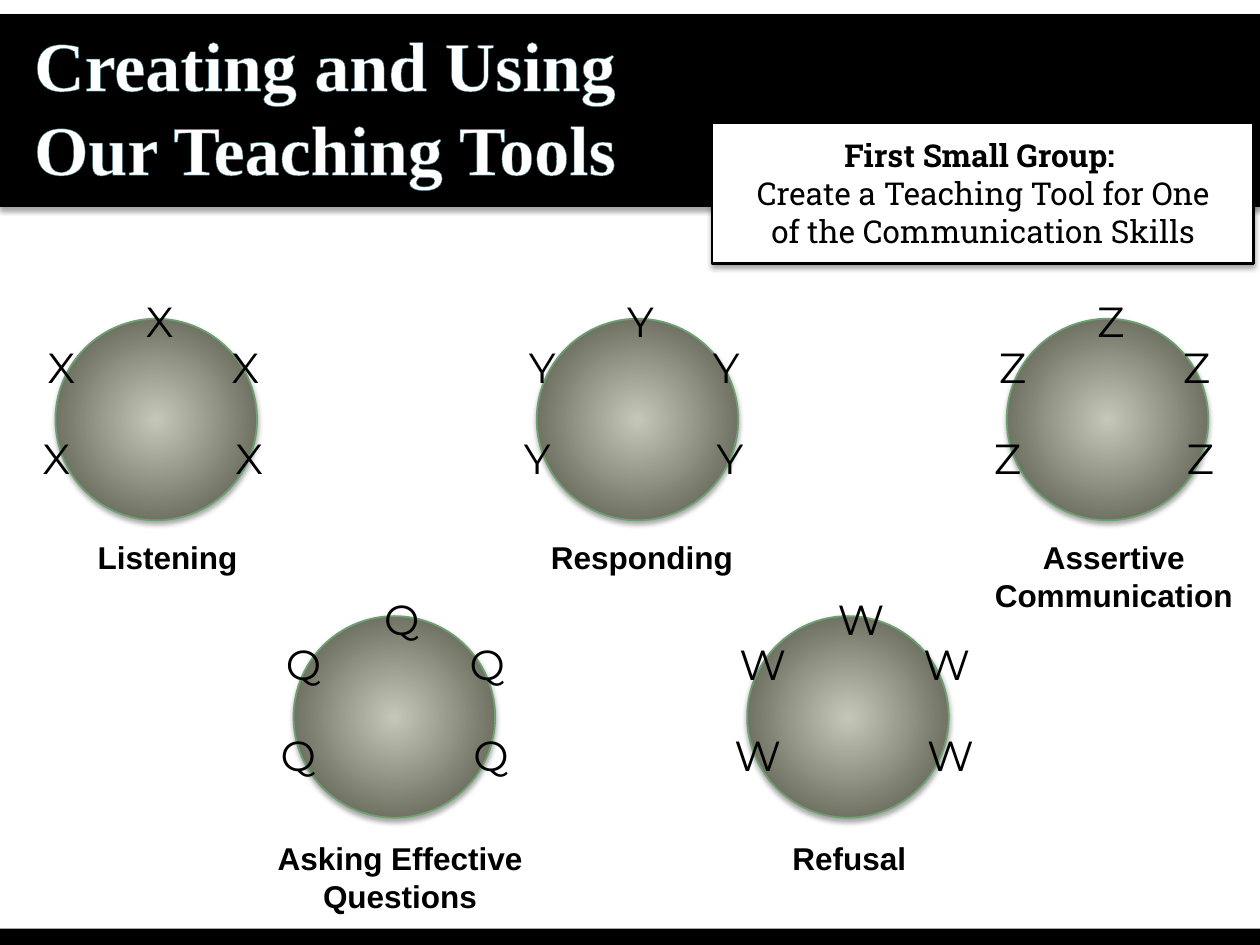
from lxml.etree import SubElement
from pptx import Presentation
from pptx.dml.color import RGBColor
from pptx.enum.shapes import MSO_SHAPE
from pptx.enum.text import MSO_ANCHOR, MSO_AUTO_SIZE, PP_ALIGN
from pptx.oxml import parse_xml
from pptx.oxml.ns import nsdecls, qn
from pptx.util import Inches, Pt

# Content
TITLE = ["Creating and Using ", "Our Teaching Tools"]
TASK = [("First Small Group: ", True),
        ("Create a Teaching Tool for One of the Communication Skills", False)]
# Skill, member letter, row, circle left, label offset from circle, label width and height
GROUPS = [
    ("Listening", "X", 0, 0.44, 0.13, 1.52, 0.4),
    ("Responding", "Y", 0, 4.26, -0.06, 1.79, 0.4),
    ("Asking Effective Questions", "Q", 1, 2.33, -0.43, 2.55, 0.71),
    ("Assertive Communication", "Z", 0, 7.99, -0.32, 2.34, 0.71),
    ("Refusal", "W", 1, 5.93, 0.05, 1.52, 0.4),
]

# Layout in inches
WIDTH, HEIGHT = 10, 7.5
BAND_WIDTH = 10.08
FOOTER_HEIGHT = 0.13
CIRCLE = 1.6
ROW_TOPS = [2.53, 4.89]
LABEL_DROPS = [1.69, 1.72]
SEATS = [(0.62, -0.23), (1.3, 0.13), (1.33, 0.85), (-0.16, 0.13), (-0.2, 0.85)]
SEAT_SIZE = (0.36, 0.5)
LINE_FACTOR = 1.2

COLORS = {"black": "000000", "white": "FFFFFF", "title_edge": "3C7483",
          "center": "C4C6B8", "rim": "4D5040", "circle_edge": "6EA172"}


def color(name):
    return RGBColor.from_string(COLORS[name])


def add_shadow(shape):
    shape._element.spPr.append(parse_xml(
        f'<a:effectLst {nsdecls("a")}><a:outerShdw blurRad="{Pt(3.1)}" dist="{Pt(1.8)}" '
        f'dir="5400000" rotWithShape="0"><a:srgbClr val="{COLORS["black"]}">'
        '<a:alpha val="35000"/></a:srgbClr></a:outerShdw></a:effectLst>'))


def add_panel(parent, kind, box, fill=None, edge=None, width=1, shadow=False):
    panel = parent.add_shape(kind, *map(Inches, box))
    if fill:
        panel.fill.solid()
        panel.fill.fore_color.rgb = color(fill)
    if edge:
        panel.line.color.rgb = color(edge)
        panel.line.width = Pt(width)
    else:
        panel.line.fill.background()
    if shadow:
        add_shadow(panel)
    else:
        panel.shadow.inherit = False
    return panel


def add_run(paragraph, text, font, size, ink="black", bold=False, outline=None):
    run = paragraph.add_run()
    run.text = text
    run.font.name, run.font.size, run.font.bold = font, Pt(size), bold
    run.font.color.rgb = color(ink)
    if outline:
        name, width = outline
        run.font._element.insert(0, parse_xml(
            f'<a:ln {nsdecls("a")} w="{Pt(width)}"><a:solidFill>'
            f'<a:srgbClr val="{COLORS[name]}"/></a:solidFill></a:ln>'))


def start_text(shape, align, size=None, grow=True):
    frame = shape.text_frame
    frame.word_wrap = True
    frame.auto_size = MSO_AUTO_SIZE.SHAPE_TO_FIT_TEXT if grow else MSO_AUTO_SIZE.NONE
    frame.vertical_anchor = MSO_ANCHOR.TOP
    paragraph = frame.paragraphs[0]
    paragraph.alignment = align
    if size:
        paragraph.line_spacing = Pt(size * LINE_FACTOR)
    return paragraph


def add_circle(parent, left, top):
    circle = add_panel(parent, MSO_SHAPE.OVAL, (left, top, CIRCLE, CIRCLE),
                       edge="circle_edge", shadow=True)
    circle.fill.gradient()
    for stop, name, position in zip(circle.fill.gradient_stops, ("center", "rim"), (0.01, 1)):
        stop.color.rgb = color(name)
        stop.position = position
    gradient = circle._element.spPr.find(qn("a:gradFill"))
    gradient.remove(gradient.find(qn("a:lin")))
    radial = SubElement(gradient, qn("a:path"), {"path": "circle"})
    SubElement(radial, qn("a:fillToRect"), dict.fromkeys("ltrb", "50000"))


def add_group(slide, skill, letter, row, left, label_shift, label_width, label_height):
    members = slide.shapes.add_group_shape().shapes
    top = ROW_TOPS[row]
    add_circle(members, left, top)
    for dx, dy in SEATS:
        seat = members.add_textbox(*map(Inches, (left + dx, top + dy, *SEAT_SIZE)))
        add_run(start_text(seat, PP_ALIGN.LEFT), letter, "Montserrat", 24,
                outline=("white", 1))
    label = add_panel(members, MSO_SHAPE.RECTANGLE,
                      (left + label_shift, top + LABEL_DROPS[row], label_width, label_height),
                      fill="white")
    tint = label._element.spPr.find(qn("a:solidFill"))[0]
    SubElement(tint, qn("a:alpha"), val="50000")
    add_run(start_text(label, PP_ALIGN.CENTER, 18), skill, "Arial", 18, bold=True)


def main():
    deck = Presentation()
    deck.slide_width, deck.slide_height = Inches(WIDTH), Inches(HEIGHT)
    slide = deck.slides.add_slide(deck.slide_layouts[5])
    shapes = slide.shapes

    # Header band, kept behind the title
    band = add_panel(shapes, MSO_SHAPE.RECTANGLE, (0, 0.13, BAND_WIDTH, 1.5),
                     "black", "black", 2.25, shadow=True)
    title = shapes.title
    title._element.addprevious(band._element)
    title.left, title.top, title.width, title.height = map(Inches, (0.17, 0.21, 5.48, 1.25))
    heading = start_text(title, PP_ALIGN.LEFT, 40, grow=False)
    title.text_frame.vertical_anchor = MSO_ANCHOR.MIDDLE
    for index, line in enumerate(TITLE):
        if index:
            heading.add_line_break()
        add_run(heading, line, "Times New Roman", 40, "white", True, ("title_edge", 0.75))

    # Task card
    add_panel(shapes, MSO_SHAPE.RECTANGLE, (5.65, 0.97, 4.3, 1.12),
              "white", "black", 1.5, shadow=True)
    task = shapes.add_textbox(*map(Inches, (5.77, 1.03, 4.07, 1.01)))
    instruction = start_text(task, PP_ALIGN.CENTER, 18)
    for index, (text, bold) in enumerate(TASK):
        if index:
            instruction.add_line_break()
        add_run(instruction, text, "Roboto Slab", 18, bold=bold)

    # Small groups seated around their circles
    for group in GROUPS:
        add_group(slide, *group)

    # Footer band
    add_panel(shapes, MSO_SHAPE.RECTANGLE,
              (0, HEIGHT - FOOTER_HEIGHT, BAND_WIDTH, FOOTER_HEIGHT), "black")
    deck.save("out.pptx")


if __name__ == "__main__":
    main()
